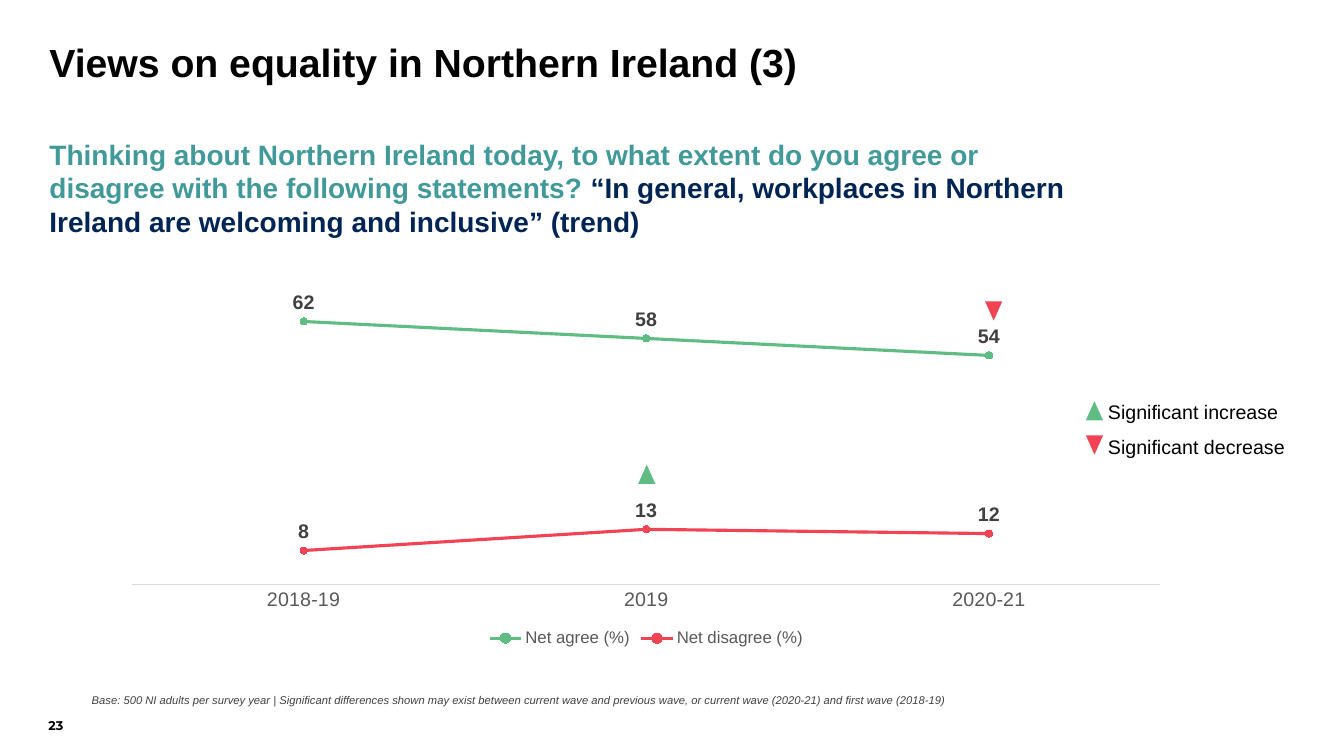
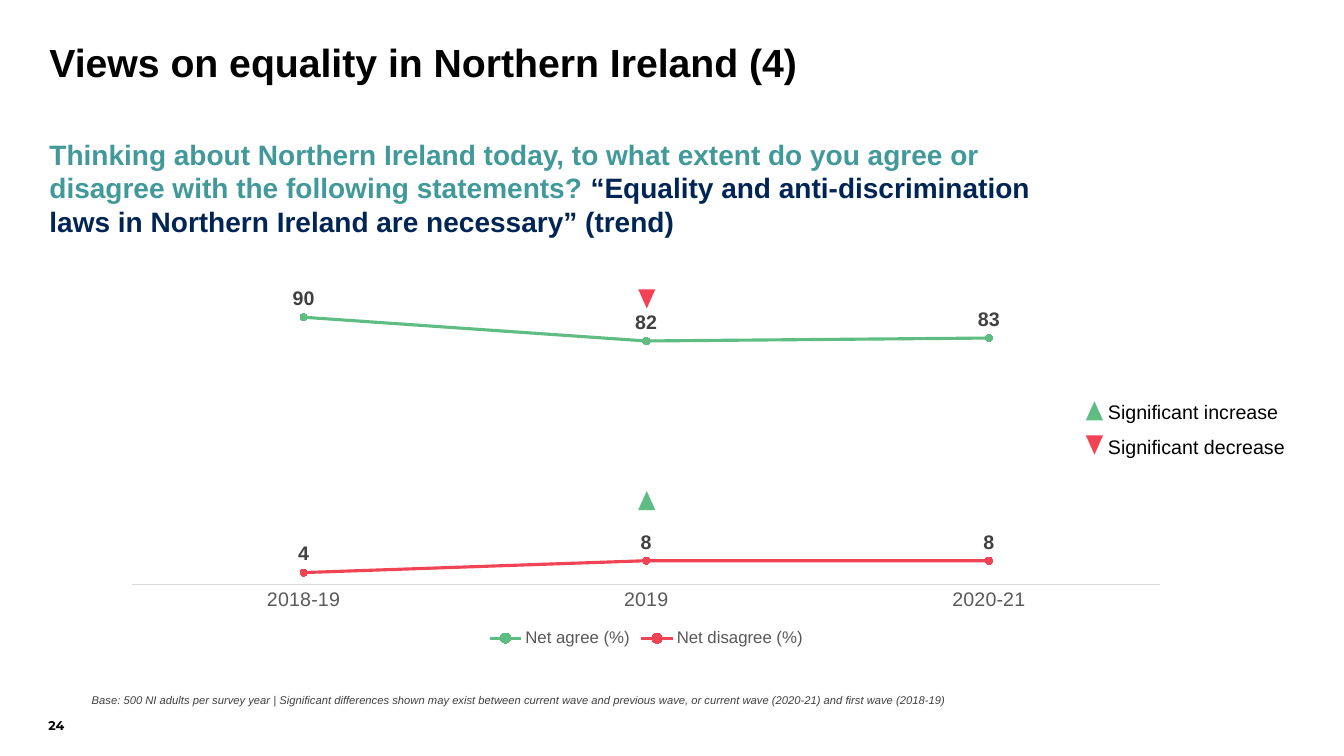
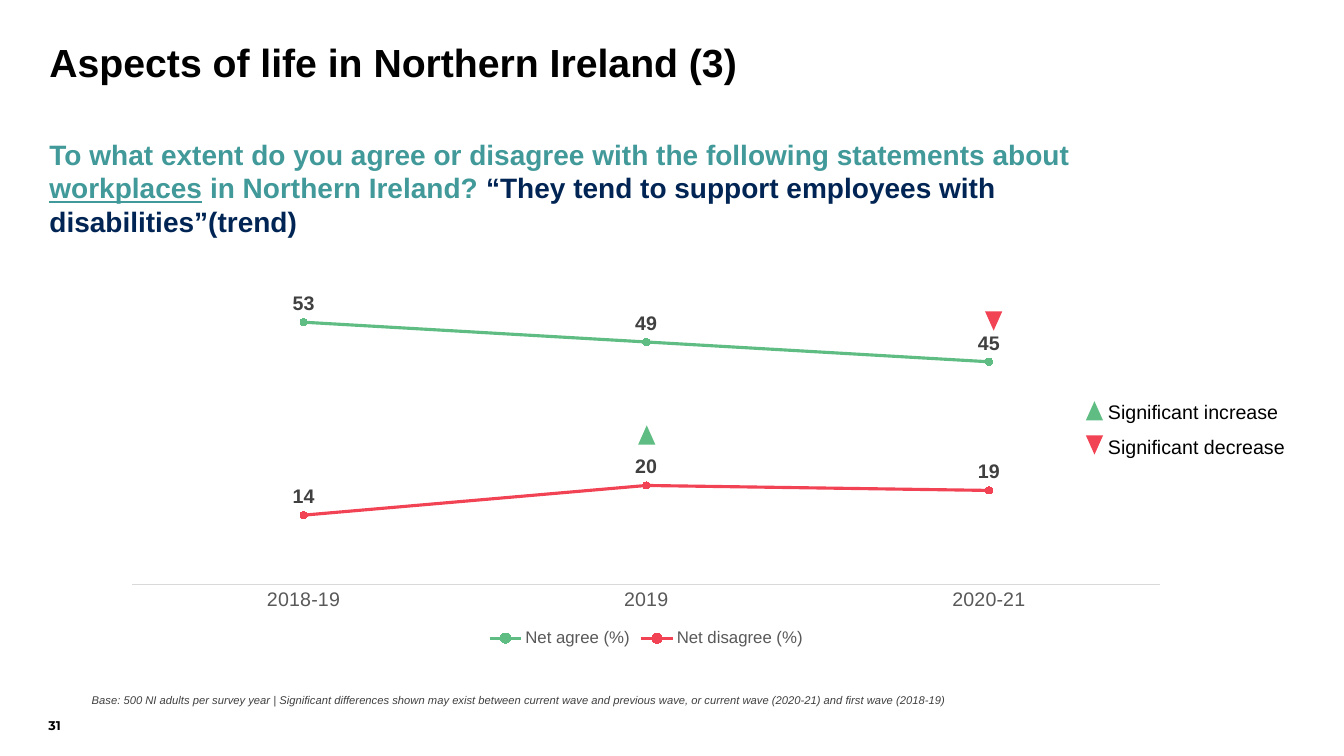
from pptx import Presentation
from pptx.chart.data import CategoryChartData
from pptx.dml.color import RGBColor
from pptx.enum.chart import (XL_CHART_TYPE, XL_LABEL_POSITION, XL_LEGEND_POSITION,
                             XL_MARKER_STYLE, XL_TICK_MARK)
from pptx.enum.shapes import MSO_SHAPE
from pptx.enum.text import MSO_ANCHOR
from pptx.util import Inches, Pt

INK = {"black": "000000", "teal": "419999", "navy": "002554", "green": "5FBD83",
       "red": "F14354", "dark": "404040", "grey": "595959", "rule": "D9D9D9"}
YEARS = ["2018-19", "2019", "2020-21"]
STEP = 3.44
NOTE = ("Base: 500 NI adults per survey year | Significant differences shown may exist "
        "between current wave and previous wave, or current wave (2020-21) and first "
        "wave (2018-19)")
VIEWS = ("Thinking about Northern Ireland today, to what extent do you agree or disagree "
         "with the following statements? ")
SLIDES = [
    {"title": "Views on equality in Northern Ireland (3)", "page": 23,
     "ask": [(VIEWS, "teal", False),
             ("“In general, workplaces in Northern Ireland are welcoming and inclusive” "
              "(trend)", "navy", False)],
     "agree": (62, 58, 54), "differ": (8, 13, 12), "top": 70,
     "marks": [(1, 1.83, True), (2, 0.21, False)]},
    {"title": "Views on equality in Northern Ireland (4)", "page": 24,
     "ask": [(VIEWS, "teal", False),
             ("“Equality and anti-discrimination laws in Northern Ireland are necessary” "
              "(trend)", "navy", False)],
     "agree": (90, 82, 83), "differ": (4, 8, 8), "top": 100,
     "marks": [(1, 2.09, True), (1, 0.09, False)]},
    {"title": "Aspects of life in Northern Ireland (3)", "page": 31,
     "ask": [("To what extent do you agree or disagree with the following statements about ",
              "teal", False),
             ("workplaces", "teal", True),
             (" in Northern Ireland? ", "teal", False),
             ("“They tend to support employees with disabilities”(trend)", "navy", False)],
     "agree": (53, 49, 45), "differ": (14, 20, 19), "top": 60,
     "marks": [(1, 1.44, True), (2, 0.31, False)]},
]


def tint(name):
    """Return a named colour."""
    return RGBColor.from_string(INK[name])


def style(font, size, color, bold=False, italic=False, name="Arial"):
    """Set the look of a font."""
    font.size, font.bold, font.italic, font.name = Pt(size), bold, italic, name
    font.color.rgb = tint(color)


def text(shapes, box, runs, size, color="black", pad=(0, 0), low=False, lead=None, **look):
    """Add a text box; runs is a string or a list of (words, colour, underline)."""
    frame = shapes.add_textbox(*map(Inches, box)).text_frame
    frame.word_wrap = True
    frame.margin_left = frame.margin_right = Inches(pad[0])
    frame.margin_top = frame.margin_bottom = Inches(pad[1])
    frame.vertical_anchor = MSO_ANCHOR.BOTTOM if low else MSO_ANCHOR.TOP
    para = frame.paragraphs[0]
    if lead:
        para.line_spacing = lead
    if isinstance(runs, str):
        runs = [(runs, color, False)]
    for words, hue, under in runs:
        run = para.add_run()
        run.text = words
        style(run.font, size, hue, **look)
        if under:
            run.font.underline = True


def mark(shapes, left, top, rise):
    """Add a triangle for a significant rise or fall."""
    shape = shapes.add_shape(MSO_SHAPE.ISOSCELES_TRIANGLE, Inches(left), Inches(top),
                             Inches(0.17), Inches(0.19))
    shape.shadow.inherit = False
    shape.rotation = 0 if rise else 180
    shape.fill.solid()
    shape.fill.fore_color.rgb = tint("green" if rise else "red")
    shape.line.fill.background()


def trend(slide, box, data):
    """Add the line chart and its significance marks."""
    table = CategoryChartData(number_format="0")
    table.categories = YEARS
    table.add_series("Net agree (%)", data["agree"])
    table.add_series("Net disagree (%)", data["differ"])
    chart = slide.shapes.add_chart(XL_CHART_TYPE.LINE_MARKERS, *map(Inches, box), table).chart
    style(chart.font, 10, "black")
    chart.has_title = False
    chart.has_legend = True
    chart.legend.position = XL_LEGEND_POSITION.BOTTOM
    chart.legend.include_in_layout = False
    style(chart.legend.font, 12, "grey")
    years, scale = chart.category_axis, chart.value_axis
    years.major_tick_mark = years.minor_tick_mark = XL_TICK_MARK.NONE
    style(years.tick_labels.font, 14, "grey")
    years.format.line.color.rgb = tint("rule")
    years.format.line.width = Pt(0.75)
    scale.visible = scale.has_major_gridlines = False
    scale.minimum_scale, scale.maximum_scale = 0, data["top"]
    plot = chart.plots[0]
    plot.vary_by_categories = False
    for series, hue in zip(plot.series, ("green", "red")):
        paint(series, hue)
    for col, down, rise in data["marks"]:
        mark(slide.shapes, box[0] + 1.79 + col * STEP, box[1] + down, rise)


def paint(series, hue):
    """Colour one series and label its points."""
    series.smooth = False
    series.format.line.color.rgb = tint(hue)
    series.format.line.width = Pt(2.25)
    dot = series.marker
    dot.style, dot.size = XL_MARKER_STYLE.CIRCLE, 5
    dot.format.fill.solid()
    dot.format.fill.fore_color.rgb = tint(hue)
    dot.format.line.color.rgb = tint(hue)
    labels = series.data_labels
    labels.show_value = True
    labels.position = XL_LABEL_POSITION.ABOVE
    labels.number_format, labels.number_format_is_linked = "0", False
    style(labels.font, 14, "dark", bold=True)


def key(slide, left, top):
    """Add the key to the significance marks."""
    shapes = slide.shapes.add_group_shape().shapes
    for row, (word, rise) in enumerate((("increase", True), ("decrease", False))):
        y = top + row * 0.34
        mark(shapes, left, y + 0.08, rise)
        text(shapes, (left + 0.12, y, 1.99, 0.2), f"Significant {word}", 14,
             pad=(0.1, 0.05), lead=1.1)


def head(slide, left, top, data):
    """Add the title and the survey question."""
    text(slide.shapes, (left, top, 10.22, 0.85), data["title"], 28, bold=True, lead=0.9)
    text(slide.shapes, (left, top + 0.93, 10.22, 1.01), data["ask"], 20, bold=True)


def foot(slide, left, top, page):
    """Add the base note and the page number."""
    text(slide.shapes, (left + 0.43, top, 12.33, 0.14), NOTE, 8, "dark", low=True,
         lead=1.1, italic=True)
    text(slide.shapes, (left, top, 0.33, 0.4), str(page), 9, low=True, bold=True,
         name="Montserrat")


def main():
    """Build and save the slides."""
    deck = Presentation()
    deck.slide_width, deck.slide_height = Inches(13.33), Inches(7.5)
    for data in SLIDES:
        slide = deck.slides.add_slide(deck.slide_layouts[6])
        head(slide, 0.49, 0.43, data)
        trend(slide, (1.1, 2.78, 10.62, 3.68), data)
        key(slide, 10.77, 3.9)
        foot(slide, 0.48, 6.87, data["page"])
    deck.save("out.pptx")


if __name__ == "__main__":
    main()
